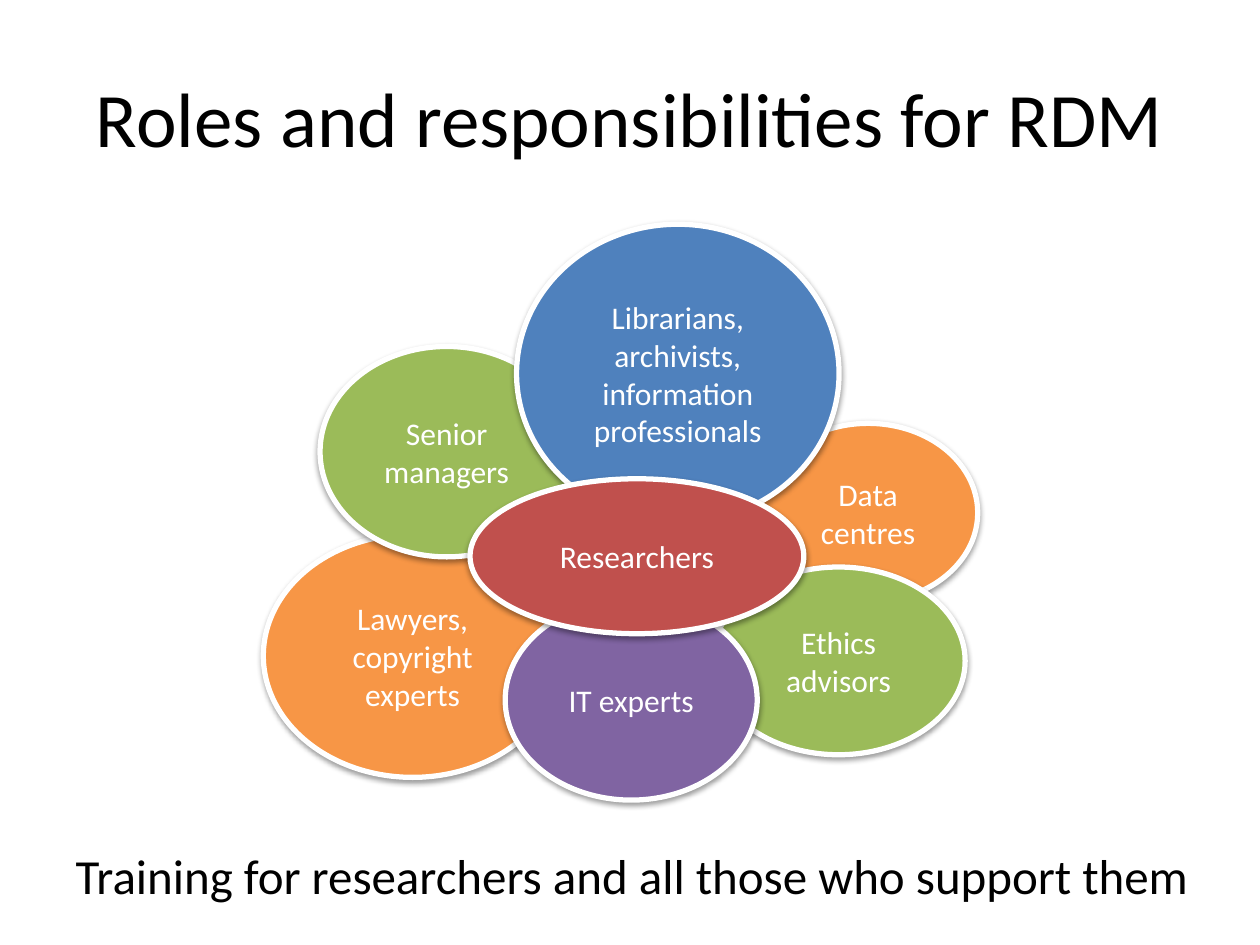
import lxml.etree
import pptx
import pptx.dml.color
import pptx.enum.shapes
import pptx.enum.text
import pptx.oxml
import pptx.oxml.ns
import pptx.util

TITLE = "Roles and responsibilities for RDM"
CAPTION = "Training for researchers and all those who support them"
FONT = "Calibri"
BLACK, WHITE = "000000", "FFFFFF"
BLUE, RED, GREEN = "4F81BD", "C0504D", "9BBB59"
PURPLE, ORANGE = "8064A2", "F79646"

# Role, fill, (left, top, width, height) in inches; later roles overlap earlier ones
ROLES = [
    ("Data centres", ORANGE, (6.02, 3.36, 1.74, 1.42)),
    ("Ethics advisors", GREEN, (5.65, 4.5, 2.01, 1.49)),
    ("Lawyers, copyright experts", ORANGE, (2.09, 4.24, 2.37, 1.93)),
    ("IT experts", PURPLE, (4.01, 4.76, 2, 1.59)),
    ("Senior managers", GREEN, (2.54, 2.75, 2.01, 1.67)),
    ("Librarians, archivists, information professionals", BLUE, (4.1, 1.78, 2.56, 2.37)),
    ("Researchers", RED, (3.73, 3.8, 2.65, 1.23)),
]

SHADOW = (
    f'<a:effectLst {pptx.oxml.ns.nsdecls("a")}>'
    '<a:outerShdw blurRad="40000" dist="20000" dir="5400000" rotWithShape="0">'
    '<a:srgbClr val="000000"><a:alpha val="38000"/></a:srgbClr>'
    '</a:outerShdw></a:effectLst>'
)


def rgb(color):
    return pptx.dml.color.RGBColor.from_string(color)


def inches(box):
    return [pptx.util.Inches(length) for length in box]


def write(shape, text, size, color, anchor=pptx.enum.text.MSO_ANCHOR.MIDDLE):
    frame = shape.text_frame
    frame.text = text
    frame.word_wrap = True
    frame.vertical_anchor = anchor
    paragraph = frame.paragraphs[0]
    paragraph.alignment = pptx.enum.text.PP_ALIGN.CENTER
    font = paragraph.runs[0].font
    font.name = FONT
    font.size = pptx.util.Pt(size)
    font.color.rgb = rgb(color)


def add_role(slide, role, fill, box):
    oval = slide.shapes.add_shape(pptx.enum.shapes.MSO_SHAPE.OVAL, *inches(box))
    oval.fill.solid()
    oval.fill.fore_color.rgb = rgb(fill)
    oval.line.color.rgb = rgb(WHITE)
    oval.line.width = pptx.util.Pt(3)
    oval.element.spPr.append(pptx.oxml.parse_xml(SHADOW))
    write(oval, role, 18, WHITE)


def main():
    deck = pptx.Presentation()
    deck.slide_width, deck.slide_height = inches((10, 7.5))
    slide = deck.slides.add_slide(deck.slide_layouts[5])

    title = slide.shapes.title
    title.left, title.top, title.width, title.height = inches((0.5, 0.3, 9, 1.25))
    write(title, TITLE, 44, BLACK)

    for role, fill, box in ROLES:
        add_role(slide, role, fill, box)

    caption = slide.shapes.add_textbox(*inches((0.43, 6.66, 9.17, 0.57)))
    write(caption, CAPTION, 28, BLACK, pptx.enum.text.MSO_ANCHOR.TOP)
    caption.text_frame.auto_size = pptx.enum.text.MSO_AUTO_SIZE.SHAPE_TO_FIT_TEXT

    deck.save("out.pptx")


if __name__ == "__main__":
    main()
